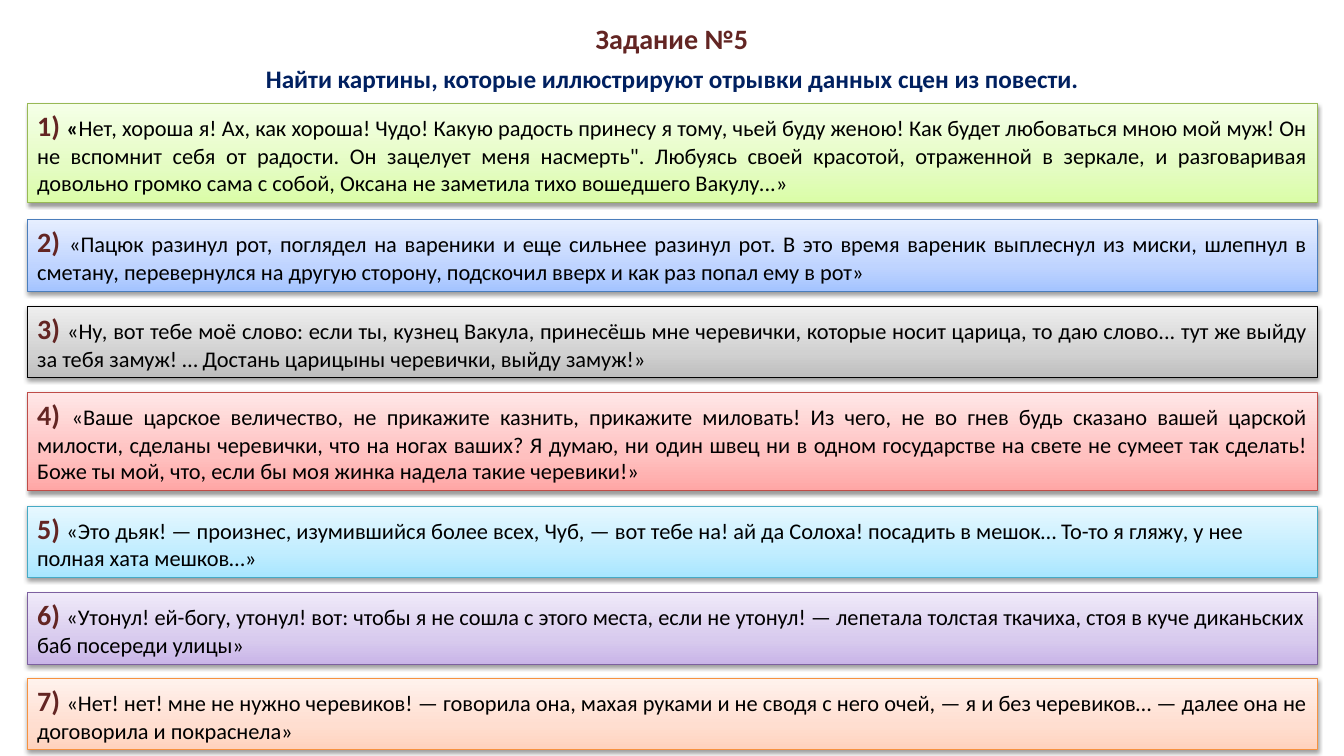
from lxml import etree
from pptx import Presentation
from pptx import util as u
from pptx.dml.color import RGBColor
from pptx.enum import shapes, text
from pptx.oxml.ns import nsdecls, qn

COLORS = {"number": "632523", "task": "002060", "body": "000000", "shadow": "000000"}
FONT = "Calibri"
LEFT, WIDTH = 0.27, 12.8
HEIGHTS = {2: 0.71, 3: 0.98}  # by number of text lines
JUST, START, CENTER = text.PP_ALIGN.JUSTIFY, text.PP_ALIGN.LEFT, text.PP_ALIGN.CENTER

TITLE = "Задание №5"
TASK = "Найти картины, которые иллюстрируют отрывки данных сцен из повести."

# top, lines, alignment, outline, gradient from bottom to top, bold opening, quote
QUOTES = [
    (1.03, 3, JUST, "98B955", ("DAFDA7", "E4FCC2", "F5FFE7"), "«",
     "Нет, хороша я! Ах, как хороша! Чудо! Какую радость принесу я тому, чьей буду женою! "
     "Как будет любоваться мною мой муж! Он не вспомнит себя от радости. Он зацелует меня "
     "насмерть\". Любуясь своей красотой, отраженной в зеркале, и разговаривая довольно "
     "громко сама с собой, Оксана не заметила тихо вошедшего Вакулу...»"),
    (2.18, 2, JUST, "4B7EBC", ("A4C4FF", "BFD4FF", "E6EEFF"), "",
     "«Пацюк разинул рот, поглядел на вареники и еще сильнее разинул рот. В это время "
     "вареник выплеснул из миски, шлепнул в сметану, перевернулся на другую сторону, "
     "подскочил вверх и как раз попал ему в рот»"),
    (3.04, 2, JUST, "000000", ("BDBDBD", "D1D1D1", "EEEEEE"), "",
     "«Ну, вот тебе моё слово: если ты, кузнец Вакула, принесёшь мне черевички, которые "
     "носит царица, то даю слово... тут же выйду за тебя замуж! … Достань царицыны "
     "черевички, выйду замуж!»"),
    (3.89, 3, JUST, "BF4C48", ("FFA6A5", "FFC0BF", "FFE7E7"), "",
     "«Ваше царское величество, не прикажите казнить, прикажите миловать! Из чего, не во "
     "гнев будь сказано вашей царской милости, сделаны черевички, что на ногах ваших? Я "
     "думаю, ни один швец ни в одном государстве на свете не сумеет так сделать! Боже ты "
     "мой, что, если бы моя жинка надела такие черевики!»"),
    (5.02, 2, START, "46AAC5", ("A7E6FF", "C1EDFF", "E7F8FF"), "",
     "«Это дьяк! — произнес, изумившийся более всех, Чуб, — вот тебе на! ай да Солоха! "
     "посадить в мешок… То-то я гляжу, у нее полная хата мешков…»"),
    (5.88, 2, START, "7D60A0", ("C9B5E8", "D8CBEE", "F0EAF9"), "",
     "«Утонул! ей-богу, утонул! вот: чтобы я не сошла с этого места, если не утонул! — "
     "лепетала толстая ткачиха, стоя в куче диканьских баб посереди улицы»"),
    (6.73, 2, JUST, "F69240", ("FFD2BD", "FFDED0", "FFF2ED"), "",
     "«Нет! нет! мне не нужно черевиков! — говорила она, махая руками и не сводя с него "
     "очей, — я и без черевиков… — далее она не договорила и покраснела»"),
]


def add_run(p, words, size, color, bold):
    r = p.add_run()
    r.text = words
    for name, value in {"name": FONT, "size": u.Pt(size), "bold": bold}.items():
        setattr(r.font, name, value)
    r.font.color.rgb = RGBColor.from_string(COLORS[color])


def add_heading(s, box, words, size, color, **frame):
    tf = s.shapes.add_textbox(*map(u.Inches, box)).text_frame
    for name, value in frame.items():
        setattr(tf, name, value)
    p = tf.paragraphs[0]
    p.alignment = CENTER
    add_run(p, words, size, color, True)
    return p


def paint(sp, outline, stops):
    """Three-stop gradient, thin outline and soft shadow below."""
    sp.line.color.rgb = RGBColor.from_string(outline)
    sp.line.width = u.Pt(0.75)
    gs = "".join(f'<a:gs pos="{pos}000"><a:srgbClr val="{c}"/></a:gs>'
                 for pos, c in zip((0, 35, 100), stops))
    fill = etree.fromstring(
        f'<a:gradFill {nsdecls("a")} rotWithShape="1"><a:gsLst>{gs}</a:gsLst>'
        '<a:lin ang="16200000" scaled="0"/></a:gradFill>')
    shadow = etree.fromstring(
        f'<a:effectLst {nsdecls("a")}><a:outerShdw blurRad="{u.Pt(3.1)}" dist="{u.Pt(1.6)}" '
        f'dir="5400000" rotWithShape="0"><a:srgbClr val="{COLORS["shadow"]}">'
        '<a:alpha val="38000"/></a:srgbClr></a:outerShdw></a:effectLst>')
    pr = sp._element.spPr
    pr.find(qn("a:prstGeom")).addnext(fill)
    pr.find(qn("a:ln")).addnext(shadow)


def add_quote(s, number, top, lines, align, outline, stops, opening, quote):
    box = (LEFT, top, WIDTH, HEIGHTS[lines])
    sp = s.shapes.add_shape(shapes.MSO_SHAPE.RECTANGLE, *map(u.Inches, box))
    paint(sp, outline, stops)
    tf = sp.text_frame
    frame = {"word_wrap": True, "auto_size": text.MSO_AUTO_SIZE.SHAPE_TO_FIT_TEXT,
             "vertical_anchor": text.MSO_ANCHOR.TOP}
    for name, value in frame.items():
        setattr(tf, name, value)
    p = tf.paragraphs[0]
    p.alignment = align
    add_run(p, f"{number}) ", 20, "number", True)
    if opening:
        add_run(p, opening, 16, "body", True)
    add_run(p, quote, 16, "body", False)


def main():
    prs = Presentation()
    prs.slide_width, prs.slide_height = u.Inches(13.33), u.Inches(7.5)
    s = prs.slides.add_slide(prs.slide_layouts[6])

    # Title and task
    add_heading(s, (0, 0.17, 13.33, 0.42), TITLE, 20, "number",
                word_wrap=True, vertical_anchor=text.MSO_ANCHOR.MIDDLE)
    p = add_heading(s, (2.53, 0.56, 8.28, 0.41), TASK, 18, "task", word_wrap=False,
                    auto_size=text.MSO_AUTO_SIZE.SHAPE_TO_FIT_TEXT)
    p.line_spacing = 1.07
    p.space_after = u.Pt(8)

    # Numbered quotes
    for number, item in enumerate(QUOTES, 1):
        add_quote(s, number, *item)

    prs.save("out.pptx")


if __name__ == "__main__":
    main()
